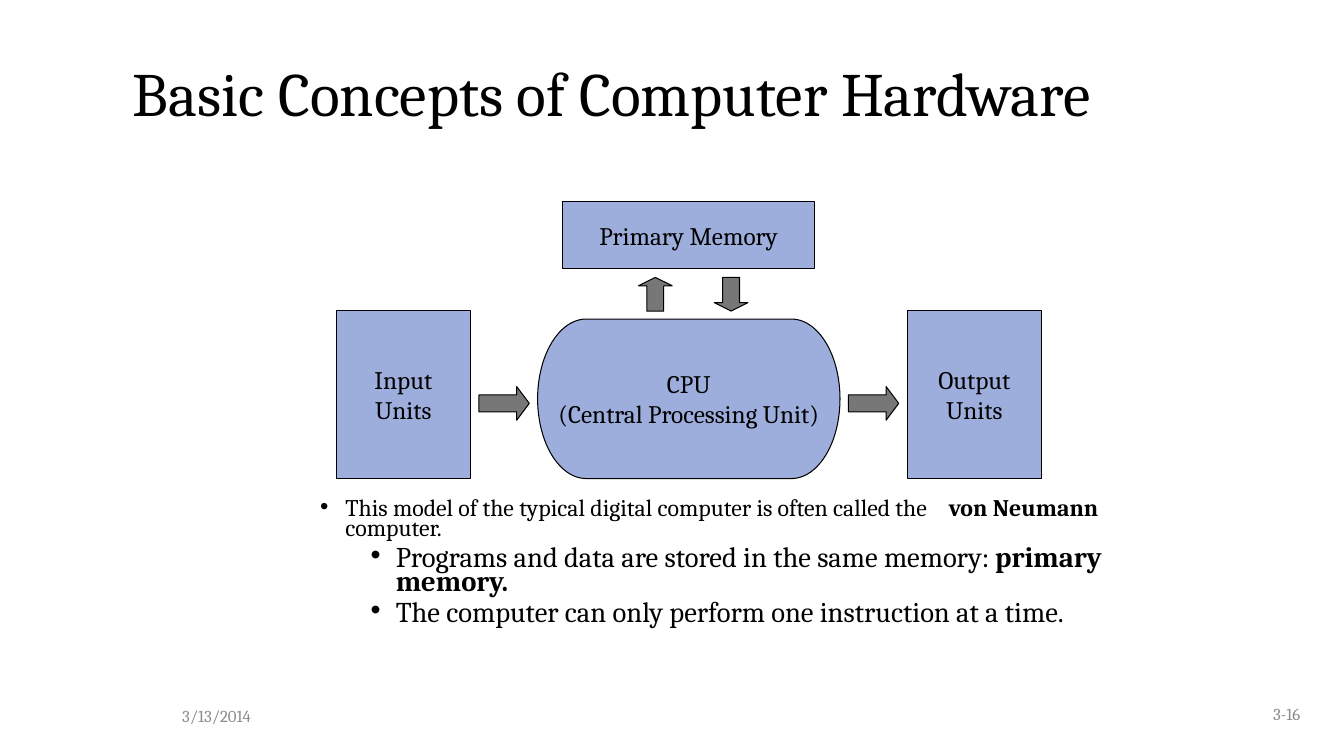
from lxml import etree
from pptx import Presentation
from pptx.dml.color import RGBColor
from pptx.enum.shapes import MSO_SHAPE
from pptx.enum.text import MSO_ANCHOR, PP_ALIGN
from pptx.oxml.ns import qn
from pptx.util import Cm, Pt

BLACK = RGBColor(0x00, 0x00, 0x00)
GREY = RGBColor(0x8C, 0x8C, 0x8C)
ARROW_GREY = RGBColor(0x77, 0x77, 0x77)
UNIT_BLUE = RGBColor(0x9E, 0xAE, 0xDC)

RECTANGLE = MSO_SHAPE.RECTANGLE
TERMINATOR = MSO_SHAPE.FLOWCHART_TERMINATOR
RIGHT_ARROW = MSO_SHAPE.RIGHT_ARROW
UP_ARROW = MSO_SHAPE.UP_ARROW
DOWN_ARROW = MSO_SHAPE.DOWN_ARROW
LEFT = PP_ALIGN.LEFT
CENTER = PP_ALIGN.CENTER
RIGHT = PP_ALIGN.RIGHT
TOP = MSO_ANCHOR.TOP
MIDDLE = MSO_ANCHOR.MIDDLE


class HardwareSlide:
    font_name = "Cambria"

    def __init__(self, slide):
        self.shapes = slide.shapes

    def style(self, font, size, color=BLACK, bold=False):
        font.name = self.font_name
        font.size = Pt(size)
        font.color.rgb = color
        font.bold = bold

    def text_frame(self, box, anchor):
        frame = self.shapes.add_textbox(*map(Cm, box)).text_frame
        frame.word_wrap = True
        frame.vertical_anchor = anchor
        return frame

    def label(self, text, box, size, color=BLACK, align=LEFT, line_spacing=1.0):
        frame = self.text_frame(box, MIDDLE)
        frame.text = text
        paragraph = frame.paragraphs[0]
        paragraph.alignment = align
        paragraph.line_spacing = line_spacing
        self.style(paragraph.runs[0].font, size, color)

    def outlined(self, kind, box, fill):
        shape = self.shapes.add_shape(kind, *map(Cm, box))
        shape.shadow.inherit = False
        shape.fill.solid()
        shape.fill.fore_color.rgb = fill
        shape.line.color.rgb = BLACK
        shape.line.width = Pt(0.75)
        return shape

    def unit(self, kind, box, text):
        frame = self.outlined(kind, box, UNIT_BLUE).text_frame
        frame.word_wrap = False
        frame.vertical_anchor = MIDDLE
        frame.text = text
        for paragraph in frame.paragraphs:
            paragraph.alignment = CENTER
            self.style(paragraph.runs[0].font, 18)

    def arrow(self, kind, box, head):
        shape = self.outlined(kind, box, ARROW_GREY)
        shape.adjustments[0] = 0.5
        shape.adjustments[1] = head

    def bullets(self, box, items):
        frame = self.text_frame(box, TOP)
        for index, (level, size, parts) in enumerate(items):
            paragraph = frame.add_paragraph() if index else frame.paragraphs[0]
            paragraph.level = level
            properties = paragraph._p.get_or_add_pPr()
            properties.set("marL", str(Cm(0.635 + 1.27 * level)))
            properties.set("indent", str(Cm(-0.635)))
            etree.SubElement(properties, qn("a:buFont"), typeface="Arial")
            etree.SubElement(properties, qn("a:buChar"), char="•")
            paragraph.line_spacing = 0.7
            if index:
                paragraph.space_before = Pt(5)
            for text, bold, tracking in parts:
                run = paragraph.add_run()
                run.text = text
                self.style(run.font, size, bold=bold)
                if tracking:
                    run.font._element.set("spc", str(tracking))


def main():
    presentation = Presentation()
    presentation.slide_width = Cm(33.87)
    presentation.slide_height = Cm(19.05)
    page = HardwareSlide(presentation.slides.add_slide(presentation.slide_layouts[6]))

    page.label("Basic Concepts of Computer Hardware", (3.1, 0.85, 28.78, 3.18), 44,
               line_spacing=0.9)
    page.bullets((7.82, 12.5, 20.24, 4.23), [
        (0, 17, [
            ("This model of the typical digital computer is often called the", False, 0),
            (" ", False, 1140),
            ("von Neumann", True, 0),
            (" computer.", False, 0),
        ]),
        (1, 20.4, [
            ("Programs and data are stored in the same memory: ", False, 0),
            ("primary memory.", True, 0),
        ]),
        (1, 20.4, [
            ("The computer can only perform one instruction at a time.", False, 0),
        ]),
    ])

    page.unit(TERMINATOR, (13.55, 8.04, 7.62, 4.02), "CPU\n(Central Processing Unit)")
    for left, text in ((8.47, "Input\nUnits"), (22.86, "Output\nUnits")):
        page.unit(RECTANGLE, (left, 7.83, 3.39, 4.23), text)
    page.unit(RECTANGLE, (14.18, 5.08, 6.35, 1.69), "Primary Memory")

    for left in (12.07, 21.38):
        page.arrow(RIGHT_ARROW, (left, 9.74, 1.27, 0.85), 0.375)
    for kind, left in ((UP_ARROW, 16.09), (DOWN_ARROW, 18)):
        page.arrow(kind, (left, 6.99, 0.85, 0.85), 0.25)

    page.label("3/13/2014", (4.34, 17.4, 7.06, 1.27), 12, GREY)
    page.label("3-16", (25.96, 17.35, 7.06, 1.27), 12, GREY, RIGHT)
    presentation.save("out.pptx")


if __name__ == "__main__":
    main()
